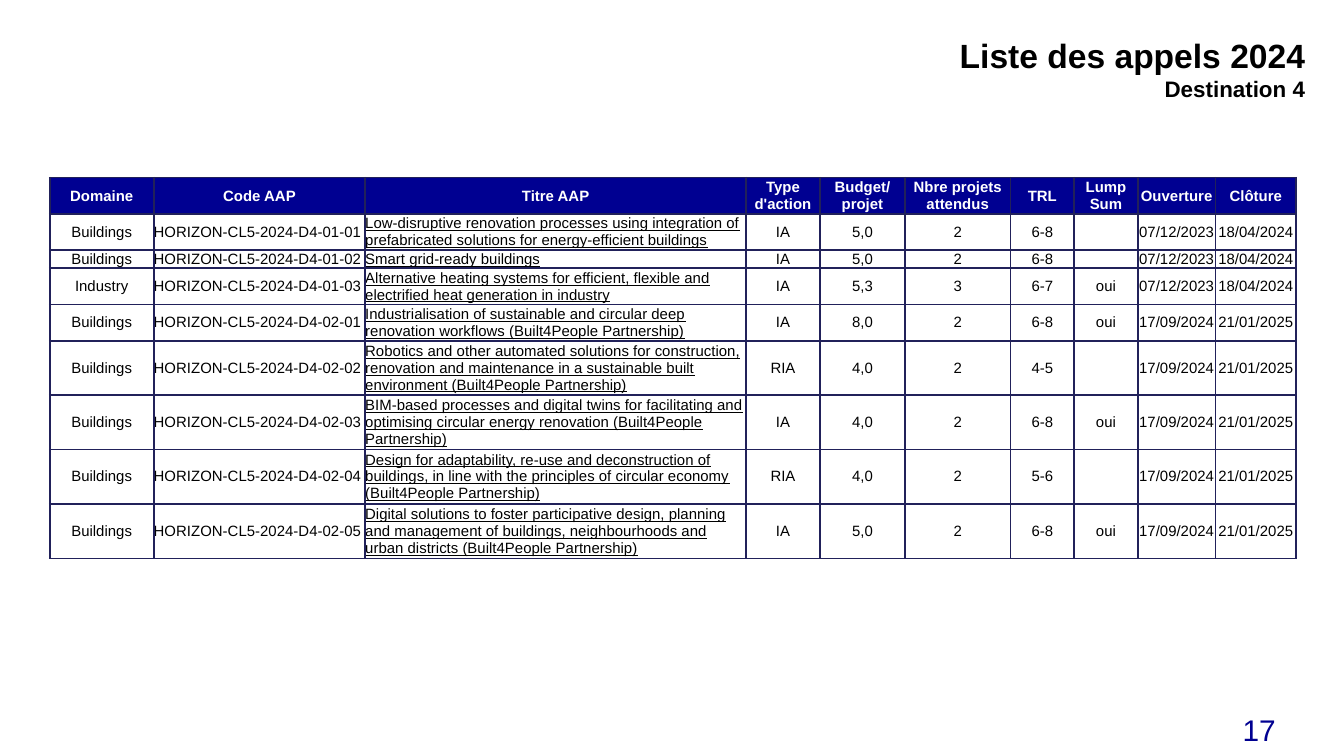
from lxml import etree
from pptx import Presentation
from pptx.dml.color import RGBColor
from pptx.enum.text import MSO_ANCHOR, PP_ALIGN
from pptx.oxml.ns import qn
from pptx.util import Inches, Pt

CENTER, LEFT, RIGHT = PP_ALIGN.CENTER, PP_ALIGN.LEFT, PP_ALIGN.RIGHT
TOP, MIDDLE = MSO_ANCHOR.TOP, MSO_ANCHOR.MIDDLE

HEADERS = ["Domaine", "Code AAP", "Titre AAP", "Type d'action", "Budget/ projet",
           "Nbre projets attendus", "TRL", "Lump Sum", "Ouverture", "Clôture"]
COLUMN_SHARES = [7.74, 15.74, 28.34, 5.5, 6.32, 7.86, 4.74, 4.74, 5.78, 6]
CODE_COLUMN, TITLE_COLUMN = 1, 2
LINE_SHARE = 2.4
LINES_PER_ROW = [2, 2, 1, 2, 2, 3, 3, 3, 3]
CALL_DATES = {"01": ("07/12/2023", "18/04/2024"), "02": ("17/09/2024", "21/01/2025")}
CALLS = [
    ("Buildings", "01", "01", "Low-disruptive renovation processes using integration of "
     "prefabricated solutions for energy-efficient buildings", "IA", "5,0", "2", "6-8", ""),
    ("Buildings", "01", "02", "Smart grid-ready buildings", "IA", "5,0", "2", "6-8", ""),
    ("Industry", "01", "03", "Alternative heating systems for efficient, flexible and "
     "electrified heat generation in industry", "IA", "5,3", "3", "6-7", "oui"),
    ("Buildings", "02", "01", "Industrialisation of sustainable and circular deep "
     "renovation workflows (Built4People Partnership)", "IA", "8,0", "2", "6-8", "oui"),
    ("Buildings", "02", "02", "Robotics and other automated solutions for construction, "
     "renovation and maintenance in a sustainable built environment "
     "(Built4People Partnership)", "RIA", "4,0", "2", "4-5", ""),
    ("Buildings", "02", "03", "BIM-based processes and digital twins for facilitating and "
     "optimising circular energy renovation (Built4People Partnership)",
     "IA", "4,0", "2", "6-8", "oui"),
    ("Buildings", "02", "04", "Design for adaptability, re-use and deconstruction of "
     "buildings, in line with the principles of circular economy "
     "(Built4People Partnership)", "RIA", "4,0", "2", "5-6", ""),
    ("Buildings", "02", "05", "Digital solutions to foster participative design, planning "
     "and management of buildings, neighbourhoods and urban districts "
     "(Built4People Partnership)", "IA", "5,0", "2", "6-8", "oui"),
]


def color(value):
    return RGBColor.from_string(value)


class SlideBuilder:
    font = "Arial"
    navy, black, white, border = "000091", "000000", "FFFFFF", "21215A"
    cell_size = 8

    def __init__(self, deck):
        self.deck = deck
        self.slide = deck.slides.add_slide(deck.slide_layouts[6])

    def across(self, share):
        return round(self.deck.slide_width * share / 100)

    def down(self, share):
        return round(self.deck.slide_height * share / 100)

    def frame(self, left, top, width, height):
        return self.across(left), self.down(top), self.across(width), self.down(height)

    def style(self, para, size, hue, align, bold=False, underline=False):
        para.alignment = align
        font = para.font
        font.name, font.size, font.bold = self.font, Pt(size), bold
        font.underline = underline
        font.color.rgb = color(hue)

    def text(self, area, lines, hue, bold=False, anchor=TOP):
        box = self.slide.shapes.add_textbox(*self.frame(*area))
        box.text_frame.word_wrap = True
        box.text_frame.vertical_anchor = anchor
        box.text_frame.text = "\n".join(words for words, size in lines)
        for para, (words, size) in zip(box.text_frame.paragraphs, lines):
            self.style(para, size, hue, RIGHT, bold)

    def cell(self, cell, words, fill, hue, align, bold, underline):
        cell.margin_left = cell.margin_right = cell.margin_top = cell.margin_bottom = 0
        cell.vertical_anchor = MIDDLE
        cell.text = words
        para = cell.text_frame.paragraphs[0]
        self.style(para, self.cell_size, hue, align, bold, underline)
        if not words:
            etree.SubElement(para._p, qn("a:endParaRPr"), sz=str(self.cell_size * 100))
        properties = cell._tc.get_or_add_tcPr()
        for side in ("lnL", "lnR", "lnT", "lnB"):
            line = etree.SubElement(properties, qn(f"a:{side}"), w=str(Pt(1)))
            solid = etree.SubElement(line, qn("a:solidFill"))
            etree.SubElement(solid, qn("a:srgbClr"), val=self.border)
        cell.fill.solid()
        cell.fill.fore_color.rgb = color(fill)

    def table(self, left, top, rows):
        height = sum(LINES_PER_ROW) * LINE_SHARE
        area = self.frame(left, top, sum(COLUMN_SHARES), height)
        table = self.slide.shapes.add_table(len(rows), len(COLUMN_SHARES), *area).table
        for column, share in zip(table.columns, COLUMN_SHARES):
            column.width = self.across(share)
        for row, lines in zip(table.rows, LINES_PER_ROW):
            row.height = self.down(lines * LINE_SHARE)
        for r, values in enumerate(rows):
            header = r == 0
            fill, hue = (self.navy, self.white) if header else (self.white, self.black)
            for c, words in enumerate(values):
                flush = not header and c in (CODE_COLUMN, TITLE_COLUMN)
                self.cell(table.cell(r, c), words, fill, hue, LEFT if flush else CENTER,
                          header, not header and c == TITLE_COLUMN)


def call_row(domain, call, topic, *details):
    return [domain, f"HORIZON-CL5-2024-D4-{call}-{topic}", *details, *CALL_DATES[call]]


def main():
    deck = Presentation()
    deck.slide_width = Inches(10)
    deck.slide_height = deck.slide_width * 9 // 16
    builder = SlideBuilder(deck)
    builder.text((83.1, 93, 12.8, 6.9), [("17", 16)], builder.navy, anchor=MIDDLE)
    builder.text((35, 3.7, 63.1, 10.9),
                 [("Liste des appels 2024", 18), ("Destination 4", 12)],
                 builder.black, bold=True)
    builder.table(3.7, 23.5, [HEADERS] + [call_row(*call) for call in CALLS])
    deck.save("out.pptx")


if __name__ == "__main__":
    main()
